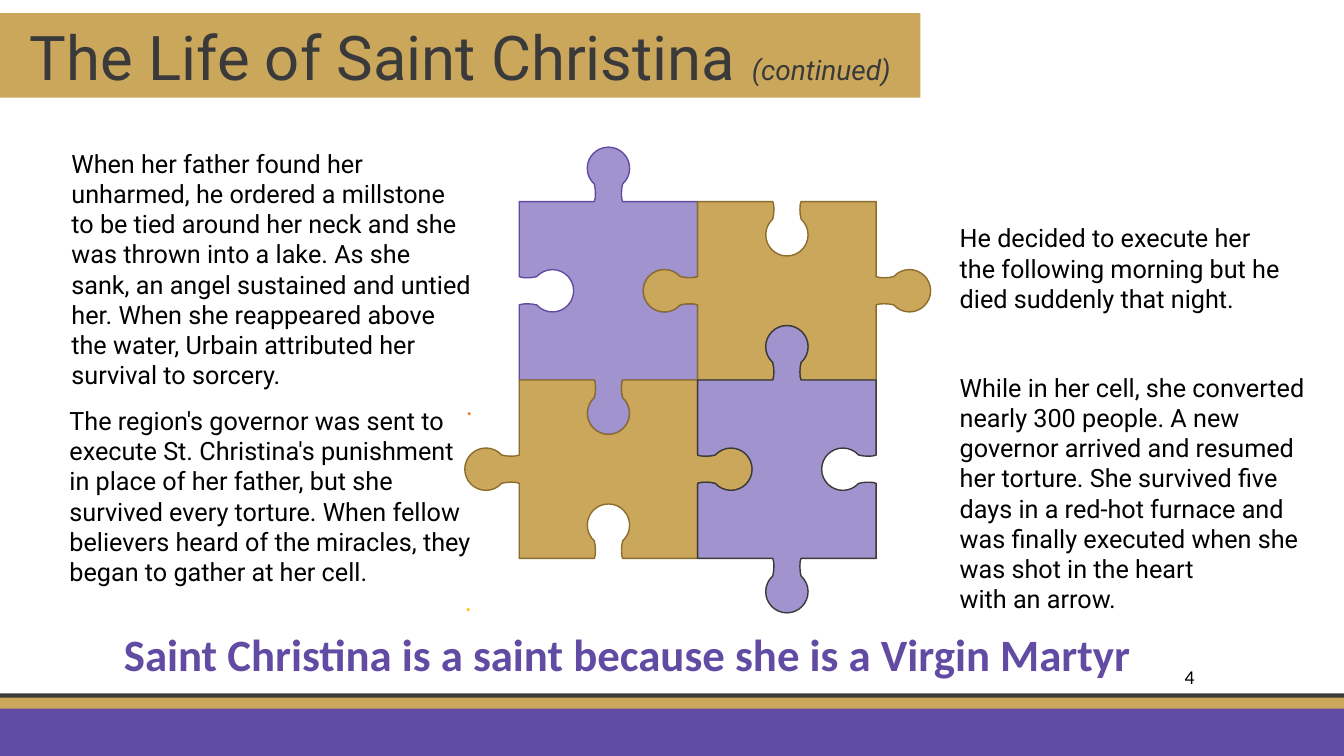
from dataclasses import dataclass
from math import cos, radians, sin, tan

from pptx import Presentation
from pptx.dml.color import RGBColor
from pptx.enum.shapes import MSO_SHAPE as Shape
from pptx.enum.text import MSO_ANCHOR as Anchor, MSO_AUTO_SIZE as AutoSize, PP_ALIGN as Align
from pptx.oxml.ns import qn
from pptx.util import Inches, Pt

GOLD, DARK_GOLD = "CAA75B", "8B6E2D"
PURPLE, LILAC = "614BA3", "A193CD"
CHARCOAL, BLACK = "3A3A3A", "000000"

SIDE = 1.77  # edge of a puzzle square
PUZZLE_LEFT, PUZZLE_TOP = 5.15, 2.0
KNOB_RADIUS, KNOB_HEIGHT = 0.21, 0.33  # height of the knob's centre above the edge
KNOB_ANGLES = [228, 180, 90, 0, -48]  # ends of the knob's arcs


@dataclass
class Bar:
    top: float
    width: float
    height: float
    color: str


@dataclass
class Para:
    text: str
    size: int = 18
    font: str = "Roboto"
    color: str = BLACK
    bold: bool = False
    italic: bool = False
    align: Align = Align.LEFT


@dataclass
class Label:
    left: float
    top: float
    width: float
    height: float
    paras: list[Para]


@dataclass
class Piece:
    col: int
    row: int
    upright: bool  # tabs at top and bottom, sockets at the sides
    fill: str
    line: str


def rgb(color: str) -> RGBColor:
    return RGBColor.from_string(color)


def dot(color: str) -> Para:
    return Para(".", font="Calibri", color=color, italic=True, align=Align.RIGHT)


def add_bar(slide, bar: Bar):
    sp = slide.shapes.add_shape(Shape.RECTANGLE, 0, Inches(bar.top),
                                Inches(bar.width), Inches(bar.height))
    sp.shadow.inherit = False
    sp.fill.solid()
    sp.fill.fore_color.rgb = rgb(bar.color)
    sp.line.fill.background()
    return sp


def add_label(slide, label: Label) -> None:
    sp = slide.shapes.add_textbox(Inches(label.left), Inches(label.top),
                                  Inches(label.width), Inches(label.height))
    tf = sp.text_frame
    tf.word_wrap = True
    tf.auto_size = AutoSize.SHAPE_TO_FIT_TEXT
    for i, para in enumerate(label.paras):
        p = tf.add_paragraph() if i else tf.paragraphs[0]
        p.text = para.text
        p.alignment = para.align
        p.font.name, p.font.size = para.font, Pt(para.size)
        p.font.bold, p.font.italic = para.bold, para.italic
        p.font.color.rgb = rgb(para.color)


def knob_point(angle: float, reach: float = 0) -> tuple[float, float]:
    """Point on the knob's circle, moved along the clockwise tangent by reach."""
    c, s = cos(radians(angle)), sin(radians(angle))
    return KNOB_RADIUS * (c + reach * s), KNOB_HEIGHT + KNOB_RADIUS * (s - reach * c)


def knob_profile() -> list[tuple[float, float]]:
    """Start and Bézier points: distance from the edge's middle, height above it."""
    neck = [(-0.14, 0), (-0.125, 0.03), (-0.125, 0.12)]
    profile = neck + [knob_point(KNOB_ANGLES[0])]
    for start, end in zip(KNOB_ANGLES, KNOB_ANGLES[1:]):
        reach = 4 / 3 * tan(radians(start - end) / 4)
        profile += [knob_point(start, reach), knob_point(end, -reach), knob_point(end)]
    return profile + [(-x, y) for x, y in reversed(neck)]


def bend_knobs(sp, per_side: int) -> None:
    """Turn each three lines of a knob into one curve; a straight line leads each side."""
    lines = sp._element.xpath(".//a:lnTo")
    for side in range(4):
        first = side * per_side + 1
        for i in range(first, first + per_side - 2, 3):
            curve, second, third = lines[i:i + 3]
            curve.tag = qn("a:cubicBezTo")
            for line in (second, third):
                curve.append(line[0])
                line.getparent().remove(line)


def add_piece(slide, piece: Piece) -> None:
    cx = PUZZLE_LEFT + (piece.col + 0.5) * SIDE
    cy = PUZZLE_TOP + (piece.row + 0.5) * SIDE
    steps = knob_profile() + [(SIDE / 2, 0)]
    points = []
    # Sides clockwise from the top; (nx, ny) points outwards
    for i, (nx, ny) in enumerate([(0, -1), (1, 0), (0, 1), (-1, 0)]):
        sign = 1 if (i % 2 == 0) == piece.upright else -1
        for along, height in steps:
            out = SIDE / 2 + sign * height
            points.append((Inches(cx + nx * out - ny * along),
                           Inches(cy + ny * out + nx * along)))
    builder = slide.shapes.build_freeform(*points[-1])
    builder.add_line_segments(points, close=True)
    sp = builder.convert_to_shape()
    bend_knobs(sp, len(steps))
    sp.shadow.inherit = False
    sp.fill.solid()
    sp.fill.fore_color.rgb = rgb(piece.fill)
    sp.line.color.rgb = rgb(piece.line)
    sp.line.width = Pt(1)


def add_title(slide) -> None:
    sp = add_bar(slide, Bar(0.13, 9.13, 0.84, GOLD))
    tf = sp.text_frame
    tf.word_wrap = True
    tf.vertical_anchor = Anchor.MIDDLE
    p = tf.paragraphs[0]
    p.alignment = Align.CENTER
    p.font.name = "Roboto"
    p.font.color.rgb = rgb(CHARCOAL)
    for text, size, italic in [("The Life of Saint Christina ", 44, False),
                               ("(continued)", 20, True)]:
        r = p.add_run()
        r.text = text
        r.font.size, r.font.italic = Pt(size), italic


FOOTER_BARS = [Bar(6.88, 13.33, 0.06, CHARCOAL), Bar(6.92, 13.33, 0.12, GOLD),
               Bar(7.03, 13.33, 0.47, PURPLE)]

STORY = [
    Label(0.61, 1.42, 4.18, 2.83, [
        Para("When her father found her unharmed, he ordered a millstone to be tied "
             "around her neck and she was thrown into a lake. As she sank, an angel "
             "sustained and untied her. When she reappeared above the water, Urbain "
             "attributed her survival to sorcery."),
        dot("ED7D31")]),
    Label(9.42, 3.64, 3.66, 2.52, [
        Para("While in her cell, she converted nearly 300 people. A new governor "
             "arrived and resumed her torture. She survived five days in a red-hot "
             "furnace and was finally executed when she was shot in the heart\v"
             "with an arrow.")]),
    Label(9.42, 2.16, 3.42, 1.01, [
        Para("He decided to execute her the following morning but he died suddenly "
             "that night.")]),
    Label(0.59, 3.97, 4.19, 2.22, [
        Para("The region's governor was sent to execute St. Christina's punishment in "
             "place of her father, but she survived every torture. When fellow "
             "believers heard of the miracles, they began to gather at her cell."),
        dot("FFC000")]),
]
CLOSING = Label(1.13, 6.17, 10.49, 0.64, [
    Para("Saint Christina is a saint because she is a Virgin Martyr",
         size=32, font="Calibri", color=PURPLE, bold=True)])
PAGE_NUMBER = Label(11.65, 6.55, 0.83, 0.34, [Para("4", size=14, font="Calibri")])

FIRST_PIECE = Piece(0, 0, True, LILAC, PURPLE)
OTHER_PIECES = [Piece(1, 0, False, GOLD, DARK_GOLD), Piece(0, 1, False, GOLD, DARK_GOLD),
                Piece(1, 1, True, LILAC, CHARCOAL)]


def main() -> None:
    prs = Presentation()
    prs.slide_width, prs.slide_height = Inches(13.33), Inches(7.5)
    slide = prs.slides.add_slide(prs.slide_layouts[6])

    # Footer stripes
    for bar in FOOTER_BARS:
        add_bar(slide, bar)

    # Puzzle around the story and title, later pieces overlapping earlier ones
    add_piece(slide, FIRST_PIECE)
    for label in STORY:
        add_label(slide, label)
    add_title(slide)
    for piece in OTHER_PIECES:
        add_piece(slide, piece)

    # Closing line and page number
    for label in (CLOSING, PAGE_NUMBER):
        add_label(slide, label)

    prs.save("out.pptx")


if __name__ == "__main__":
    main()
